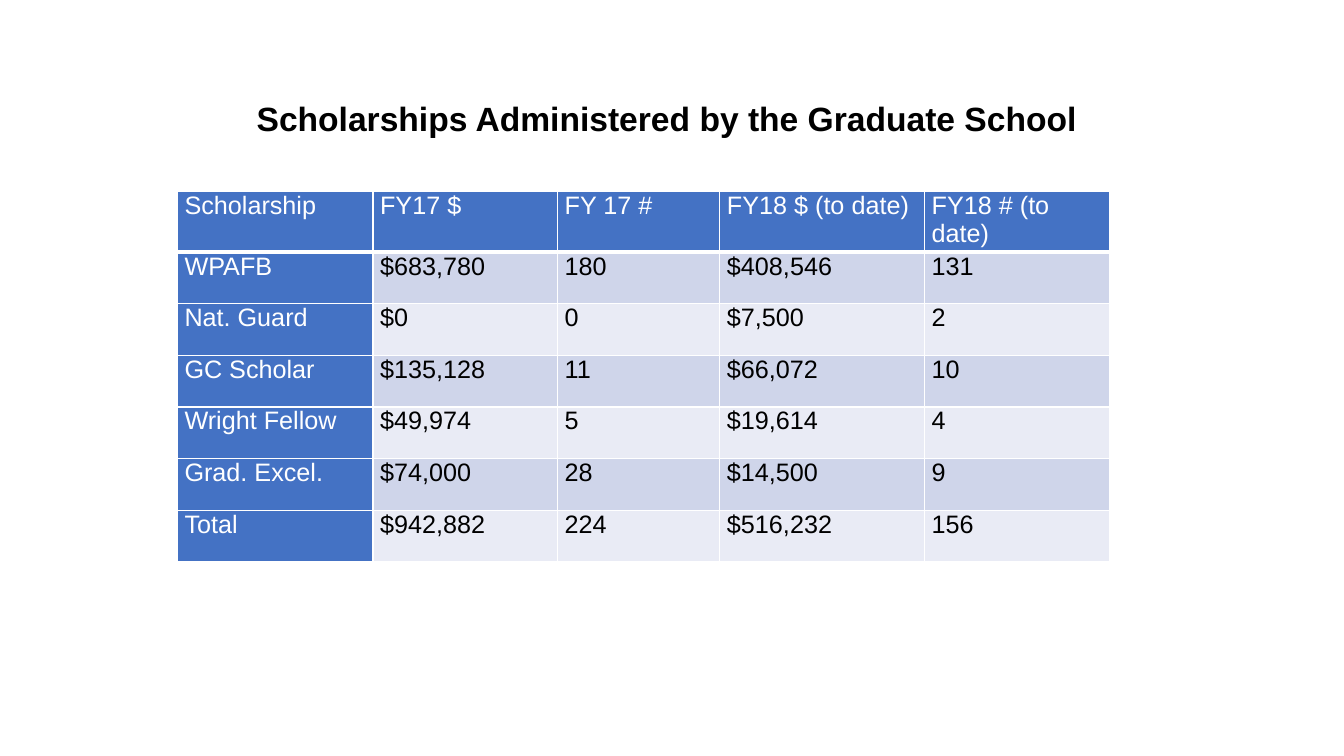
from typing import NamedTuple

from lxml import etree
from pptx import Presentation
from pptx.dml.color import RGBColor
from pptx.enum.text import MSO_AUTO_SIZE, PP_ALIGN
from pptx.oxml.ns import qn
from pptx.util import Cm, Pt

CENTER = PP_ALIGN.CENTER
GROW = MSO_AUTO_SIZE.SHAPE_TO_FIT_TEXT

FONT = "Arial"
WHITE = RGBColor(0xFF, 0xFF, 0xFF)
BLACK = RGBColor(0x00, 0x00, 0x00)
BLUE = RGBColor(0x44, 0x72, 0xC4)
BANDS = (RGBColor(0xE9, 0xEB, 0xF5), RGBColor(0xCF, 0xD5, 0xEA))

WIDTHS = (4.93, 4.65, 4.09, 5.16, 4.67)
ROW = 1.3
SIDE = 0.18


class Award(NamedTuple):
    name: str
    paid17: str
    count17: str
    paid18: str
    count18: str


AWARDS = (
    Award("Scholarship", "FY17 $", "FY 17 #", "FY18 $ (to date)", "FY18 # (to date)"),
    Award("WPAFB", "$683,780", "180", "$408,546", "131"),
    Award("Nat. Guard", "$0", "0", "$7,500", "2"),
    Award("GC Scholar", "$135,128", "11", "$66,072", "10"),
    Award("Wright Fellow", "$49,974", "5", "$19,614", "4"),
    Award("Grad. Excel.", "$74,000", "28", "$14,500", "9"),
    Award("Total", "$942,882", "224", "$516,232", "156"),
)


def set_font(par, size: int, color: RGBColor, bold: bool) -> None:
    font = par.font
    font.name, font.size, font.bold = FONT, Pt(size), bold
    font.color.rgb = color


def add_title(slide) -> None:
    box = slide.shapes.add_textbox(Cm(5.16), Cm(2.34), Cm(23.52), Cm(1.27))
    frame = box.text_frame
    frame.word_wrap = True
    frame.auto_size = GROW
    par = frame.paragraphs[0]
    par.text = "Scholarships Administered by the Graduate School "
    par.alignment = CENTER
    set_font(par, 24, BLACK, True)


def add_edges(cell, base: int) -> None:
    """Draw white cell borders, with the bottom one base points wide."""
    props = cell._tc.get_or_add_tcPr()
    edges = (("a:lnL", 1), ("a:lnR", 1), ("a:lnT", 1), ("a:lnB", base))
    for spot, (tag, width) in enumerate(edges):
        line = etree.Element(qn(tag), w=str(Pt(width)))
        fill = etree.SubElement(line, qn("a:solidFill"))
        etree.SubElement(fill, qn("a:srgbClr"), val=str(WHITE))
        props.insert(spot, line)


def fill_cell(cell, text: str, row: int, col: int) -> None:
    head = row == 0 or col == 0
    cell.margin_left = cell.margin_right = Cm(SIDE)
    cell.margin_top = cell.margin_bottom = 0
    cell.fill.solid()
    cell.fill.fore_color.rgb = BLUE if head else BANDS[row % 2]
    add_edges(cell, 3 if row == 0 else 1)
    par = cell.text_frame.paragraphs[0]
    par.text = text
    set_font(par, 18, WHITE if head else BLACK, False)


def add_grid(slide) -> None:
    rows = len(AWARDS)
    frame = slide.shapes.add_table(
        rows, len(WIDTHS), Cm(4.47), Cm(4.83), Cm(sum(WIDTHS)), Cm(ROW * rows)
    )
    table = frame.table
    table.first_col = True
    for col, width in zip(table.columns, WIDTHS):
        col.width = Cm(width)
    for row, award in enumerate(AWARDS):
        table.rows[row].height = Cm(ROW)
        for col, text in enumerate(award):
            fill_cell(table.cell(row, col), text, row, col)


def main() -> None:
    deck = Presentation()
    deck.slide_width, deck.slide_height = Cm(33.87), Cm(19.05)
    slide = deck.slides.add_slide(deck.slide_layouts[6])
    add_title(slide)
    add_grid(slide)
    deck.save("out.pptx")


if __name__ == "__main__":
    main()
